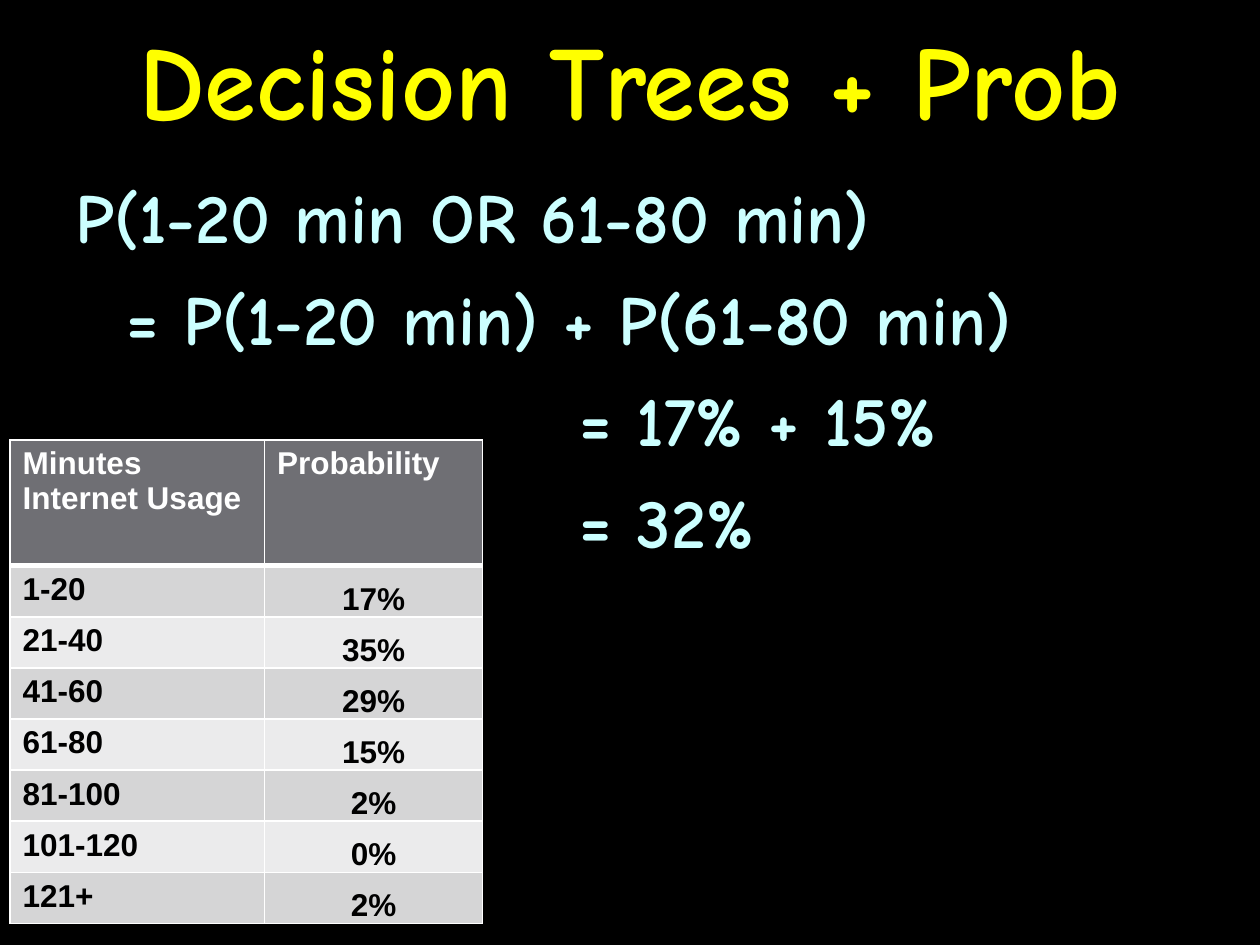
from dataclasses import dataclass

from lxml import etree
from pptx import Presentation
from pptx.dml.color import RGBColor
from pptx.enum.text import MSO_ANCHOR, MSO_AUTO_SIZE, PP_ALIGN
from pptx.oxml.ns import qn
from pptx.util import Inches, Pt

LEFT, CENTER = PP_ALIGN.LEFT, PP_ALIGN.CENTER
TOP, MIDDLE, BOTTOM = MSO_ANCHOR.TOP, MSO_ANCHOR.MIDDLE, MSO_ANCHOR.BOTTOM
NO_AUTOFIT = MSO_AUTO_SIZE.NONE


@dataclass(frozen=True)
class Theme:
    background: str = "000000"
    title_color: str = "FFFF00"
    body_color: str = "CCFFFF"
    header_fill: str = "6F6F74"
    header_text: str = "FFFFFF"
    band_fills: tuple = ("D5D5D6", "EBEBEC")
    cell_text: str = "000000"
    border: str = "FFFFFF"
    thin_border: float = 1
    thick_border: float = 3
    display_font: str = "Comic Neue"
    table_font: str = "Arial"
    title_size: int = 60
    body_size: int = 40
    table_size: int = 18


def write_text(paragraph, text, *, font, size, color, align=LEFT, space_before=0):
    paragraph.alignment = align
    paragraph.space_before = Pt(space_before)
    run = paragraph.add_run()
    run.text = text
    run.font.name = font
    run.font.size = Pt(size)
    run.font.bold = True
    run.font.color.rgb = RGBColor.from_string(color)


class SlideBuilder:
    """Builds the elements of one slide in a shared theme."""

    def __init__(self, slide, theme):
        self.slide = slide
        self.theme = theme
        fill = slide.background.fill
        fill.solid()
        fill.fore_color.rgb = RGBColor.from_string(theme.background)

    def place(self, shape, left, top, width, height, anchor):
        shape.left, shape.top = Inches(left), Inches(top)
        shape.width, shape.height = Inches(width), Inches(height)
        frame = shape.text_frame
        frame.auto_size = NO_AUTOFIT
        frame.vertical_anchor = anchor
        return frame

    def title(self, text, *box):
        frame = self.place(self.slide.shapes.title, *box, MIDDLE)
        write_text(frame.paragraphs[0], text, font=self.theme.display_font,
                   size=self.theme.title_size, color=self.theme.title_color, align=CENTER)

    def body(self, lines, *box):
        frame = self.place(self.slide.placeholders[1], *box, TOP)
        for index, (text, indent) in enumerate(lines):
            paragraph = frame.add_paragraph() if index else frame.paragraphs[0]
            write_text(paragraph, text, font=self.theme.display_font,
                       size=self.theme.body_size, color=self.theme.body_color, space_before=10)
            properties = paragraph._p.get_or_add_pPr()
            properties.set("marL", str(Inches(indent)))
            properties.set("indent", "0")
            etree.SubElement(properties, qn("a:buNone"))

    def cell_borders(self, cell, top, bottom):
        properties = cell._tc.get_or_add_tcPr()
        thin = self.theme.thin_border
        for side, width in (("L", thin), ("R", thin), ("T", top), ("B", bottom)):
            line = etree.SubElement(properties, qn(f"a:ln{side}"), w=str(Pt(width)))
            fill = etree.SubElement(line, qn("a:solidFill"))
            etree.SubElement(fill, qn("a:srgbClr"), val=self.theme.border)

    def cell(self, cell, text, row, column):
        theme = self.theme
        header = row == 0
        centered = column == 1 and not header
        self.cell_borders(cell,
                          theme.thick_border if row == 1 else theme.thin_border,
                          theme.thick_border if header else theme.thin_border)
        cell.fill.solid()
        fill = theme.header_fill if header else theme.band_fills[(row - 1) % 2]
        cell.fill.fore_color.rgb = RGBColor.from_string(fill)
        margins = (0.01, 0.01, 0.01, 0) if centered else (0.1, 0.05, 0.1, 0.05)
        (cell.margin_left, cell.margin_top,
         cell.margin_right, cell.margin_bottom) = map(Inches, margins)
        cell.vertical_anchor = BOTTOM if centered else TOP
        write_text(cell.text_frame.paragraphs[0], text, font=theme.table_font,
                   size=theme.table_size, align=CENTER if centered else LEFT,
                   color=theme.header_text if header else theme.cell_text)

    def table(self, rows, left, top, widths, height, header_height):
        shape = self.slide.shapes.add_table(
            len(rows), len(widths), Inches(left), Inches(top),
            Inches(sum(widths)), Inches(height))
        table = shape.table
        for column, width in zip(table.columns, widths):
            column.width = Inches(width)
        row_height = (height - header_height) / (len(rows) - 1)
        for row, texts in enumerate(rows):
            table.rows[row].height = Inches(row_height if row else header_height)
            for column, text in enumerate(texts):
                self.cell(table.cell(row, column), text, row, column)


def main():
    presentation = Presentation()
    presentation.slide_width, presentation.slide_height = Inches(10), Inches(7.5)
    slide = presentation.slides.add_slide(presentation.slide_layouts[1])
    builder = SlideBuilder(slide, Theme())
    builder.title("Decision Trees + Prob", 0, 0, 10, 1.25)
    builder.body([
        ("P(1-20 min OR 61-80 min)", 0),
        ("= P(1-20 min) + P(61-80 min)", 0.4),
        ("= 17% + 15%", 4),
        ("= 32%", 4),
    ], 0.5, 1.33, 9.5, 6.17)
    builder.table([
        ("Minutes Internet Usage", "Probability"),
        ("1-20", "17%"),
        ("21-40", "35%"),
        ("41-60", "29%"),
        ("61-80", "15%"),
        ("81-100", "2%"),
        ("101-120", "0%"),
        ("121+", "2%"),
    ], left=0.08, top=3.49, widths=(2.02, 1.73), height=3.84, header_height=1)
    presentation.save("out.pptx")


if __name__ == "__main__":
    main()
